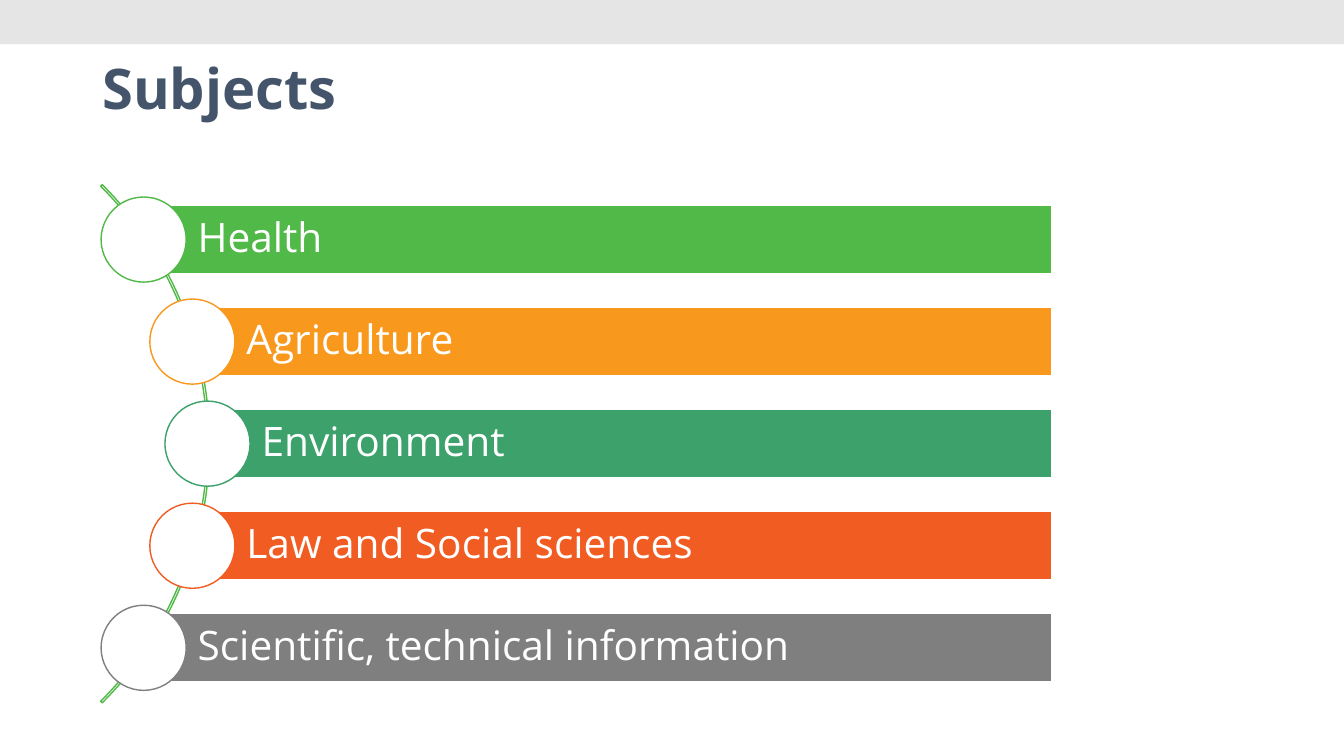
from pptx import Presentation
from pptx import util as u
from pptx.dml import color
from pptx.enum import shapes, text

SHAPE = shapes.MSO_SHAPE
FONT = "Open Sans"
GREEN = "51B948"
WHITE = "FFFFFF"


def rgb(code):
    """Turn a hex string into a colour."""
    return color.RGBColor.from_string(code)


class Deck:
    """Hold the style and the current slide."""

    def __init__(self):
        """Open a blank deck with one titled slide."""
        self.prs = Presentation()
        self.prs.slide_width, self.prs.slide_height = u.Pt(960), u.Pt(540)
        self.slide = self.prs.slides.add_slide(self.prs.slide_layouts[5])

    def label(self, frame, words, size, ink, pad, anchor, bold=False):
        """Fill a text frame with one styled line."""
        frame.text = words
        frame.word_wrap = True
        frame.auto_size = text.MSO_AUTO_SIZE.NONE
        frame.vertical_anchor = anchor
        (frame.margin_left, frame.margin_top,
         frame.margin_right, frame.margin_bottom) = map(u.Pt, pad)
        line = frame.paragraphs[0]
        line.alignment = text.PP_ALIGN.LEFT
        line.line_spacing = 0.9
        line.font.name, line.font.size = FONT, u.Pt(size)
        line.font.bold, line.font.color.rgb = bold, rgb(ink)

    def title(self, words, left, top, width, height):
        """Place and style the slide title."""
        head = self.slide.shapes.title
        head.left, head.top = u.Pt(left), u.Pt(top)
        head.width, head.height = u.Pt(width), u.Pt(height)
        self.label(head.text_frame, words, 40, "44546A", (7.2, 1, 7.2, 3.6),
                   text.MSO_ANCHOR.TOP, True)

    def shape(self, kind, left, top, width, height, fill=None, edge=None):
        """Draw a preset shape without shadow."""
        item = self.slide.shapes.add_shape(
            kind, u.Pt(left), u.Pt(top), u.Pt(width), u.Pt(height))
        item.shadow.inherit = False
        if fill:
            item.fill.solid()
            item.fill.fore_color.rgb = rgb(fill)
        else:
            item.fill.background()
        if edge:
            item.line.color.rgb = rgb(edge)
            item.line.width = u.Pt(1)
        else:
            item.line.fill.background()
        return item

    def arc(self, left, top, size, hue):
        """Draw the thin arc that links the circles."""
        bow = self.shape(SHAPE.BLOCK_ARC, left, top, size, size, edge=hue)
        for spot, value in enumerate((189, 27, 0.003)):
            bow.adjustments[spot] = value

    def row(self, words, hue, mid_x, mid_y, right=751, tall=48.6, size=60.8):
        """Draw a labelled bar with a circle at its left end."""
        bar = self.shape(SHAPE.RECTANGLE, mid_x, mid_y - tall / 2,
                         right - mid_x, tall, hue, WHITE)
        self.label(bar.text_frame, words, 29, WHITE, (38.6, 5.8, 5.8, 5.8),
                   text.MSO_ANCHOR.MIDDLE)
        self.shape(SHAPE.OVAL, mid_x - size / 2, mid_y - size / 2,
                   size, size, WHITE, hue)


def main():
    """Build and save the slide."""
    deck = Deck()
    deck.shape(SHAPE.RECTANGLE, 0, 0, 960, 31.5, "E5E5E5")
    deck.title("Subjects", 66, 42.5, 828, 66.2)
    deck.arc(-373.7, 55.3, 523.4, GREEN)
    rows = [
        ("Health", GREEN, 102.6),
        ("Agriculture", "F8981D", 137.4),
        ("Environment", "3CA16B", 148.2),
        ("Law and Social sciences", "F15C22", 137.4),
        ("Scientific, technical information", "7F7F7F", 102.6),
    ]
    for step, (words, hue, mid_x) in enumerate(rows):
        deck.row(words, hue, mid_x, 171.1 + 72.9 * step)
    deck.prs.save("out.pptx")


if __name__ == "__main__":
    main()
